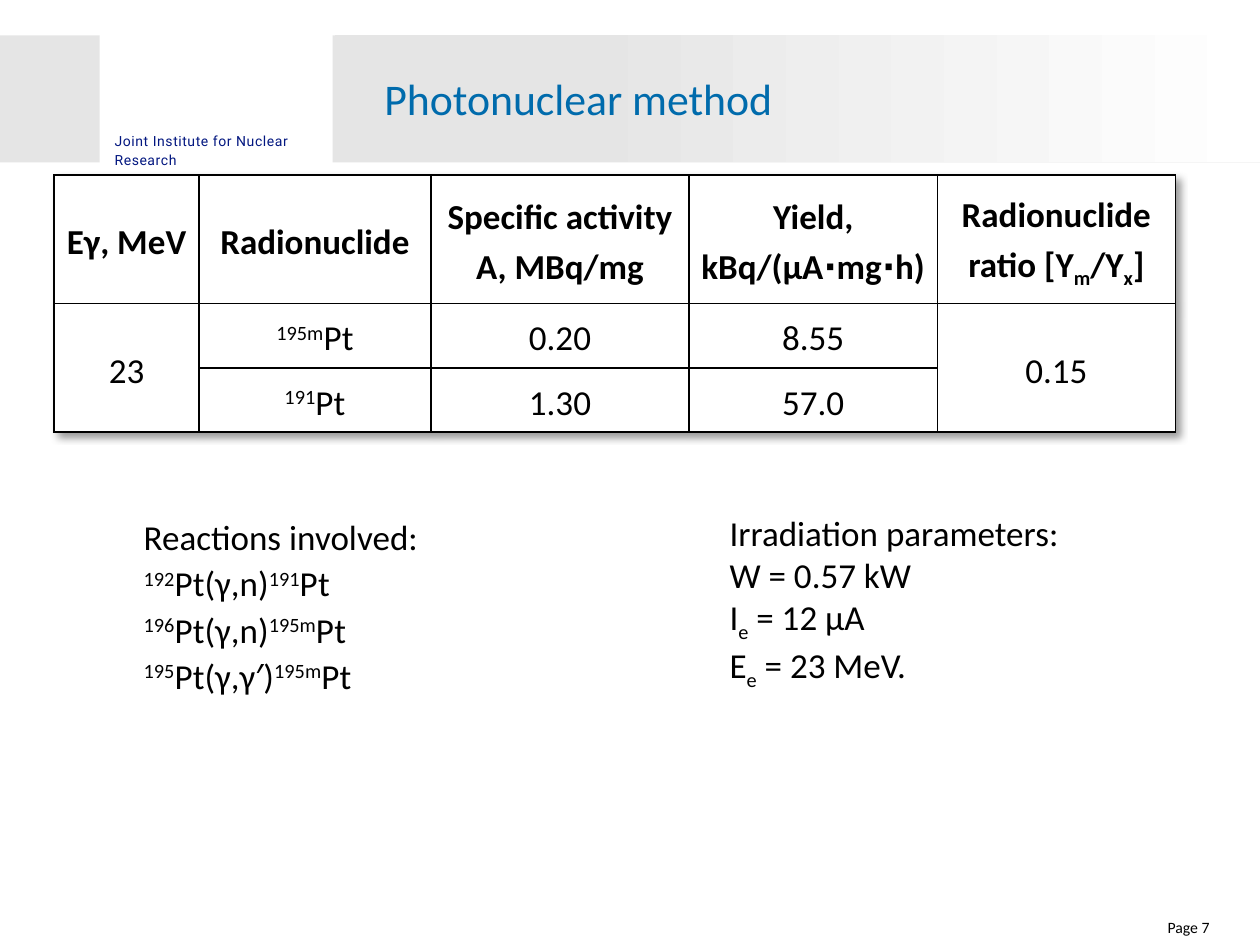
from lxml.etree import SubElement
from pptx import Presentation
from pptx.dml.color import RGBColor
from pptx.enum.shapes import MSO_SHAPE as SHAPE
from pptx.enum.text import MSO_ANCHOR as ANCHOR, PP_ALIGN as ALIGN
from pptx.oxml import parse_xml
from pptx.oxml.ns import nsdecls, qn
from pptx.util import Inches, Pt

BLACK = RGBColor(0x00, 0x00, 0x00)
WHITE = RGBColor(0xFF, 0xFF, 0xFF)
GREY = RGBColor(0xE5, 0xE5, 0xE5)
BLUE = RGBColor(0x00, 0x6B, 0xAC)
NAVY = RGBColor(0x03, 0x17, 0x80)

# In all texts "|" separates runs; "^" starts a superscript and "_" a subscript.
BASELINES = {"^": "30000", "_": "-25000"}

TITLE = "Photonuclear method"
INSTITUTE = ["Joint Institute for Nuclear", "Research"]
PAGE = ["Page 7"]
REACTIONS = [
    "Reactions involved:",
    "^192|Pt(γ,n)|^191|Pt",
    "^196|Pt(γ,n)|^195m|Pt",
    "^195|Pt(γ,γ′)|^195m|Pt",
]
IRRADIATION = ["Irradiation parameters:", "W = 0.57 kW", "I|_e| = 12 μA", "E|_e| = 23 MeV."]
YIELDS = [
    ["Eγ, MeV", "Radionuclide", "Specific activity A, MBq/mg",
     "Yield, kBq/(μА⋅mg⋅h)", "Radionuclide ratio [Y|_m|/Y|_x|]"],
    ["23", "^195m|Pt", "0.20", "8.55", "0.15"],
    ["", "^191|Pt", "1.30", "57.0", ""],
]
COL_WIDTHS = [1.15, 1.84, 2.05, 1.97, 1.89]
ROW_HEIGHTS = [1.02, 0.51, 0.51]
MERGED_COLS = [0, 4]

BAND_TOP, BAND_HEIGHT = 0.28, 1.01
TEXT_TOP = 4.06


def write(tf, lines, size=20, color=BLACK, font="Calibri", bold=False,
          align=ALIGN.LEFT, spacing=1.0, tracking=None, bullets=True):
    for i, line in enumerate(lines):
        p = tf.paragraphs[0] if i == 0 else tf.add_paragraph()
        if not bullets:
            pPr = p._p.get_or_add_pPr()
            pPr.set("marL", "0")
            pPr.set("indent", "0")
            SubElement(pPr, qn("a:buNone"))
        p.alignment, p.line_spacing, p.space_before = align, spacing, Pt(0)
        for part in filter(None, line.split("|")):
            r = p.add_run()
            r.text = part.lstrip("^_")
            f = r.font
            f.name, f.size, f.bold, f.color.rgb = font, Pt(size), bold, color
            rPr = r._r.get_or_add_rPr()
            if part[0] in BASELINES:
                rPr.set("baseline", BASELINES[part[0]])
            if tracking:
                rPr.set("spc", str(tracking))


def clear_margins(tf):
    tf.margin_left = tf.margin_right = tf.margin_top = tf.margin_bottom = 0


def place(sp, *box):
    sp.left, sp.top, sp.width, sp.height = map(Inches, box)


def add_text(s, box, lines, **fmt):
    tf = s.shapes.add_textbox(*map(Inches, box)).text_frame
    clear_margins(tf)
    tf.word_wrap = True
    write(tf, lines, **fmt)


def add_band(s, left, right, fade=False):
    sp = s.shapes.add_shape(SHAPE.RECTANGLE, *map(
        Inches, (left, BAND_TOP, right - left, BAND_HEIGHT)))
    sp.shadow.inherit = False
    sp.line.fill.background()
    if fade:
        sp.fill.gradient()
        sp.fill.gradient_angle = 180
        for stop, pos, color in zip(sp.fill.gradient_stops, (0, 0.74), (WHITE, GREY)):
            stop.position, stop.color.rgb = pos, color
    else:
        sp.fill.solid()
        sp.fill.fore_color.rgb = GREY


def format_cell(cell):
    cell.margin_left = cell.margin_right = Inches(0.07)
    cell.margin_top = cell.margin_bottom = 0
    cell.vertical_anchor = ANCHOR.MIDDLE
    tcPr = cell._tc.get_or_add_tcPr()
    for side in ("lnL", "lnR", "lnT", "lnB"):
        tcPr.append(parse_xml(
            f'<a:{side} {nsdecls("a")} w="{Pt(1)}"><a:solidFill>'
            f'<a:srgbClr val="{BLACK}"/></a:solidFill></a:{side}>'))
    cell.fill.solid()
    cell.fill.fore_color.rgb = WHITE


def add_yield_table(s):
    box = (0.43, 1.39, sum(COL_WIDTHS), sum(ROW_HEIGHTS))
    table = s.shapes.add_table(len(YIELDS), len(COL_WIDTHS), *map(Inches, box)).table
    table.first_row = table.horz_banding = False
    table._tbl.tblPr.insert(0, parse_xml(
        f'<a:effectLst {nsdecls("a")}><a:outerShdw blurRad="50800" dist="38100" dir="2700000">'
        f'<a:srgbClr val="{BLACK}"><a:alpha val="40000"/></a:srgbClr>'
        '</a:outerShdw></a:effectLst>'))
    for col, width in zip(table.columns, COL_WIDTHS):
        col.width = Inches(width)
    for row, height in zip(table.rows, ROW_HEIGHTS):
        row.height = Inches(height)
    for c in MERGED_COLS:
        table.cell(1, c).merge(table.cell(2, c))
    for r, texts in enumerate(YIELDS):
        for c, text in enumerate(texts):
            cell = table.cell(r, c)
            format_cell(cell)
            if text:
                write(cell.text_frame, [text], bold=r == 0, align=ALIGN.CENTER, spacing=1.15)


def main():
    prs = Presentation()
    prs.slide_width, prs.slide_height = Inches(10), Inches(7.5)
    s = prs.slides.add_slide(prs.slide_layouts[1])
    title, body = s.shapes.title, s.placeholders[1]

    add_band(s, 0, 0.79)
    add_band(s, 2.64, 10)
    add_text(s, (0.91, 1.04, 1.7, 0.3), INSTITUTE, size=8, color=NAVY,
             font="Roboto", spacing=1.1, tracking=30)
    add_band(s, 2.66, 10, fade=True)

    # Placeholders exist first, so lift them above the header bands.
    for sp in (body, title):
        s.shapes.element.append(sp.element)
    place(body, 1.14, TEXT_TOP, 3.62, 1.57)
    clear_margins(body.text_frame)
    write(body.text_frame, REACTIONS, spacing=1.1, bullets=False)
    place(title, 2.95, 0.52, 6.66, 0.56)
    title.text_frame.vertical_anchor = ANCHOR.TOP
    write(title.text_frame, [TITLE], size=25, color=BLUE)

    add_text(s, (8.97, 7.28, 0.63, 0.22), PAGE, size=9, align=ALIGN.RIGHT)
    add_yield_table(s)
    add_text(s, (5.79, TEXT_TOP, 3.19, 1.42), IRRADIATION)
    prs.save("out.pptx")


if __name__ == "__main__":
    main()
